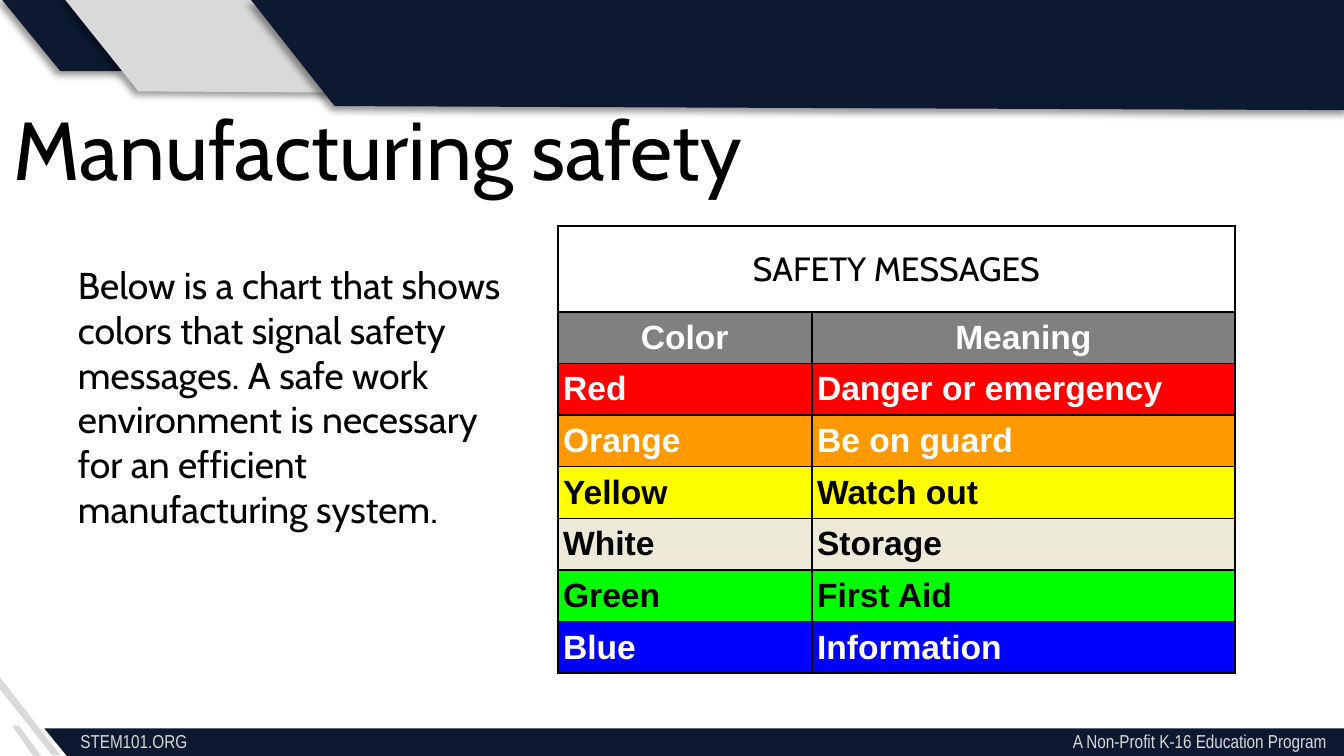
from typing import NamedTuple

from lxml.etree import SubElement
from pptx import Presentation
from pptx.dml.color import RGBColor
from pptx.enum.text import MSO_ANCHOR as Anchor, MSO_AUTO_SIZE as AutoSize, PP_ALIGN as Align
from pptx.oxml.ns import qn
from pptx.util import Inches, Pt

NAVY = RGBColor(0x0C, 0x19, 0x30)
LIGHT_GRAY = RGBColor(0xD9, 0xD9, 0xD9)
GRAY = RGBColor(0x80, 0x80, 0x80)
BLACK = RGBColor(0, 0, 0)
WHITE = RGBColor(0xFF, 0xFF, 0xFF)
RED = RGBColor(0xFF, 0, 0)
ORANGE = RGBColor(0xFF, 0x99, 0)
YELLOW = RGBColor(0xFF, 0xFF, 0)
IVORY = RGBColor(0xEC, 0xE9, 0xD8)
GREEN = RGBColor(0, 0xFF, 0)
BLUE = RGBColor(0, 0, 0xFF)

SLIDE_WIDTH = Inches(10)
SLIDE_HEIGHT = SLIDE_WIDTH * 9 // 16
TABLE_HEIGHT = Inches(3.32)
HEADING_HEIGHT = Inches(0.63)


class Band(NamedTuple):
    points: list[tuple[float, float]]
    color: RGBColor
    shadow: bool = False


class SafetyRow(NamedTuple):
    label: str
    meaning: str
    fill: RGBColor
    text_color: RGBColor
    align: Align = Align.LEFT


BANDS = [
    Band([(0.45, 0.53), (0, -0.02), (0.48, -0.02), (0.93, 0.53)], NAVY, True),
    Band([(1.03, 0.68), (0.47, -0.02), (2.04, -0.02), (2.59, 0.69)], LIGHT_GRAY, True),
    Band([(0.31, 5.63), (0.25, 5.63), (0.09, 5.4), (0.14, 5.4)], LIGHT_GRAY),
    Band([(0.45, 5.62), (0.39, 5.62), (0, 5.13), (0, 5.04)], LIGHT_GRAY),
    Band([(2.49, 0.79), (1.86, -0.01), (10.02, -0.01), (10.04, 0.82)], NAVY, True),
    Band([(10.06, 5.65), (0.51, 5.64), (0.33, 5.42), (10.07, 5.42)], NAVY),
]

SAFETY_ROWS = [
    SafetyRow("Color", "Meaning", GRAY, WHITE, Align.CENTER),
    SafetyRow("Red", "Danger or emergency", RED, WHITE),
    SafetyRow("Orange", "Be on guard", ORANGE, WHITE),
    SafetyRow("Yellow", "Watch out", YELLOW, BLACK),
    SafetyRow("White", "Storage", IVORY, BLACK),
    SafetyRow("Green", "First Aid", GREEN, BLACK),
    SafetyRow("Blue", "Information", BLUE, WHITE),
]


def add_run(paragraph, text: str, size: float, font: str, color: RGBColor, bold: bool = False) -> None:
    run = paragraph.add_run()
    run.text = text
    run.font.size = Pt(size)
    run.font.name = font
    run.font.bold = bold
    run.font.color.rgb = color


def place(shape, left: float, top: float, width: float, height: float) -> None:
    shape.left, shape.top = Inches(left), Inches(top)
    shape.width, shape.height = Inches(width), Inches(height)


def draw_band(slide, band: Band) -> None:
    start, *others = [(Inches(x), Inches(y)) for x, y in band.points]
    builder = slide.shapes.build_freeform(*start)
    builder.add_line_segments(others, close=True)
    shape = builder.convert_to_shape()
    shape.fill.solid()
    shape.fill.fore_color.rgb = band.color
    shape.line.fill.background()
    shape.shadow.inherit = False
    if band.shadow:
        effects = shape.element.spPr.find(qn("a:effectLst"))
        outer = SubElement(effects, qn("a:outerShdw"), blurRad=str(Pt(4)), dist=str(Pt(3)),
                           dir="8100000", algn="tr", rotWithShape="0")
        color = SubElement(outer, qn("a:srgbClr"), val=str(BLACK))
        SubElement(color, qn("a:alpha"), val="40000")


def fill_placeholder(shape, text: str, size: float) -> None:
    frame = shape.text_frame
    frame.auto_size = AutoSize.NONE
    frame.word_wrap = True
    frame.vertical_anchor = Anchor.TOP
    paragraph = frame.paragraphs[0]
    properties = paragraph._p.get_or_add_pPr()
    properties.set("marL", "0")
    properties.set("indent", "0")
    SubElement(properties, qn("a:buNone"))
    paragraph.alignment = Align.LEFT
    paragraph.space_before = Pt(0)
    add_run(paragraph, text, size, "Cabin", BLACK)


def draw_footer(slide, left_text: str, right_text: str) -> None:
    box = slide.shapes.add_textbox(Inches(0.5), Inches(5.38), Inches(9.5), Inches(0.27))
    box.text_frame.word_wrap = True
    paragraph = box.text_frame.paragraphs[0]
    tabs = SubElement(paragraph._p.get_or_add_pPr(), qn("a:tabLst"))
    SubElement(tabs, qn("a:tab"), pos=str(Inches(9.27)), algn="r")
    for text in (left_text, "\t" + right_text):
        add_run(paragraph, text, 10, "Arial Narrow", LIGHT_GRAY)


def format_cell(cell, fill: RGBColor, inset: float) -> None:
    properties = cell._tc.get_or_add_tcPr()
    for side in ("a:lnL", "a:lnR", "a:lnT", "a:lnB"):
        line = SubElement(properties, qn(side), w=str(Pt(1)))
        SubElement(SubElement(line, qn("a:solidFill")), qn("a:srgbClr"), val=str(BLACK))
    cell.fill.solid()
    cell.fill.fore_color.rgb = fill
    cell.vertical_anchor = Anchor.MIDDLE
    cell.margin_left = cell.margin_right = Inches(inset)
    cell.margin_top = cell.margin_bottom = Inches(inset)


def draw_safety_table(slide, heading: str, rows: list[SafetyRow]) -> None:
    frame = slide.shapes.add_table(len(rows) + 1, 2, Inches(4.15), Inches(1.68),
                                   Inches(5.04), TABLE_HEIGHT)
    table = frame.table
    table.first_row = table.horz_banding = False
    table.columns[0].width = Inches(1.89)
    table.columns[1].width = Inches(3.15)
    for table_row in table.rows:
        table_row.height = (TABLE_HEIGHT - HEADING_HEIGHT) // len(rows)
    table.rows[0].height = HEADING_HEIGHT

    for cell in table.rows[0].cells:
        format_cell(cell, WHITE, 0.17)
    table.cell(0, 0).merge(table.cell(0, 1))
    paragraph = table.cell(0, 0).text_frame.paragraphs[0]
    paragraph.alignment = Align.CENTER
    add_run(paragraph, heading, 18, "Cabin", BLACK)

    for row_index, row in enumerate(rows, start=1):
        for column_index, text in enumerate((row.label, row.meaning)):
            cell = table.cell(row_index, column_index)
            format_cell(cell, row.fill, 0.04)
            paragraph = cell.text_frame.paragraphs[0]
            paragraph.alignment = row.align
            add_run(paragraph, text, 18, "Arial", row.text_color, bold=True)


def main() -> None:
    presentation = Presentation()
    presentation.slide_width, presentation.slide_height = SLIDE_WIDTH, SLIDE_HEIGHT
    slide = presentation.slides.add_slide(presentation.slide_layouts[1])

    for band in BANDS:
        draw_band(slide, band)
    draw_footer(slide, "STEM101.ORG", "A Non-Profit K-16 Education Program")

    title, body = slide.shapes.title, slide.placeholders[1]
    place(title, 0, 0.68, 9.19, 0.75)
    fill_placeholder(title, "Manufacturing safety", 44)
    place(body, 0.48, 1.9, 3.38, 2.53)
    fill_placeholder(body, "Below is a chart that shows colors that signal safety messages. "
                     "A safe work environment is necessary for an efficient manufacturing system.", 20)

    draw_safety_table(slide, "SAFETY MESSAGES", SAFETY_ROWS)
    presentation.save("out.pptx")


if __name__ == "__main__":
    main()
